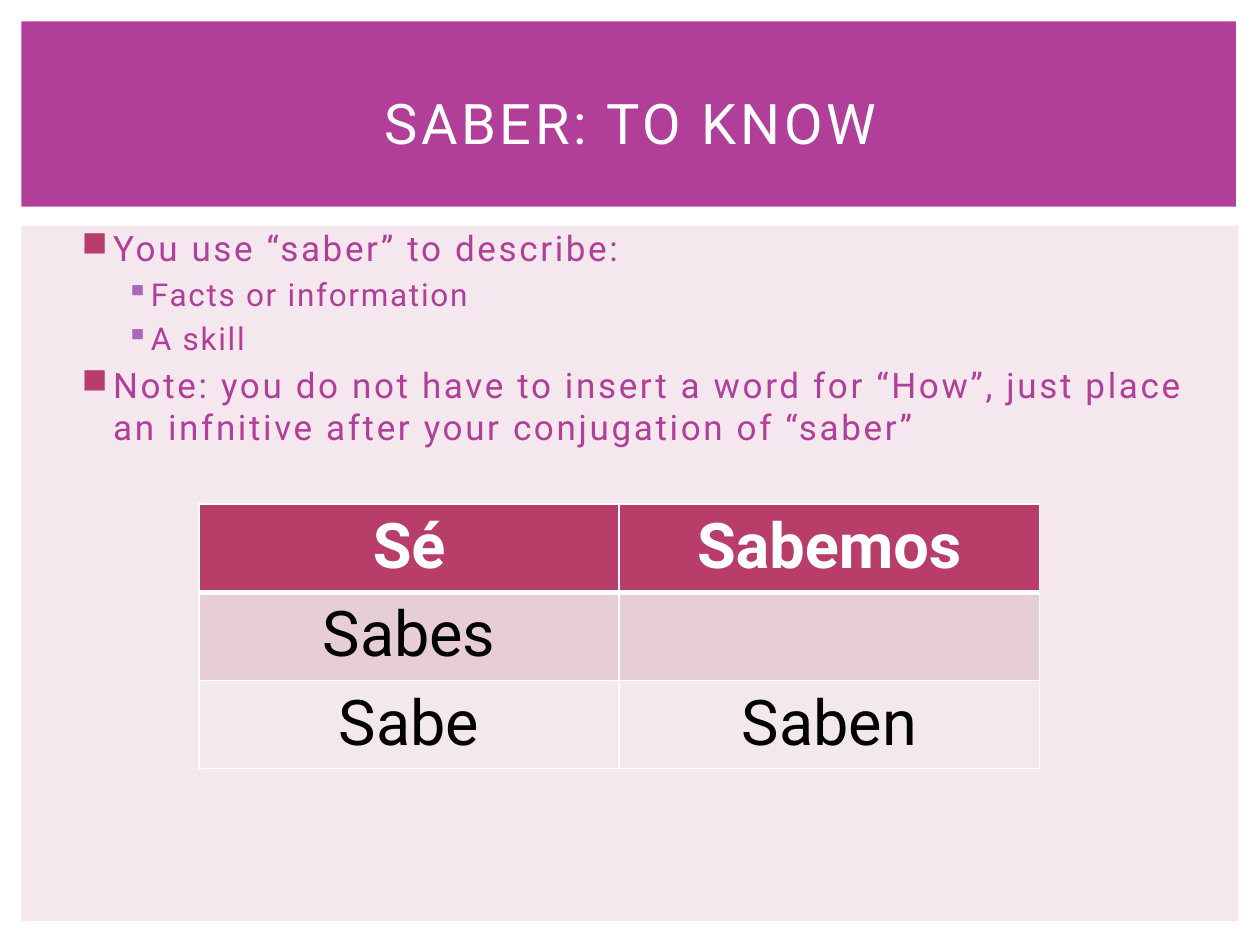
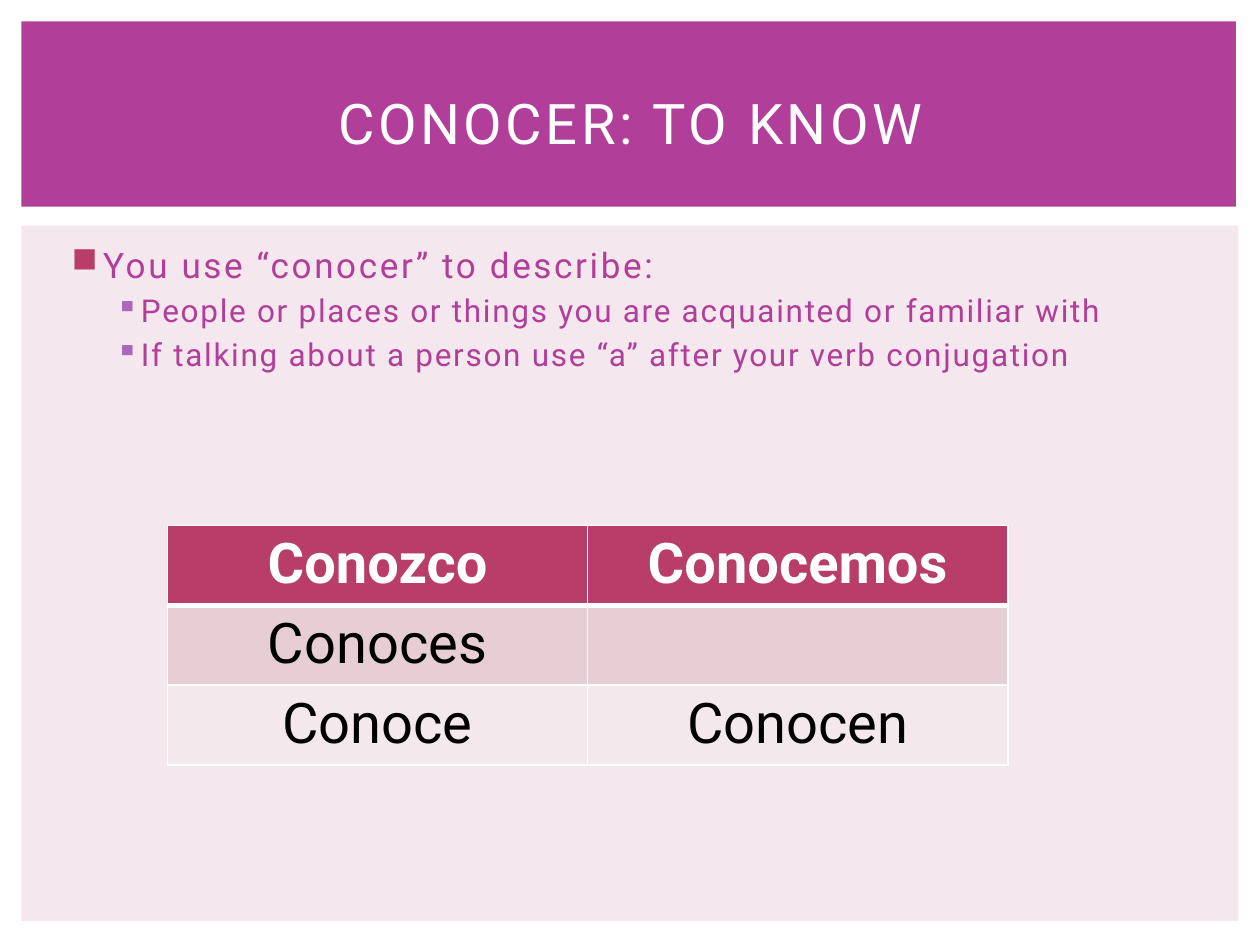
from lxml import etree
from pptx import Presentation
from pptx.dml.color import RGBColor
from pptx.enum.shapes import MSO_SHAPE
from pptx.enum.text import MSO_ANCHOR, PP_ALIGN
from pptx.oxml.ns import qn
from pptx.util import Inches, Pt

FONT = "Roboto"
COLORS = {
    "white": "FFFFFF",
    "black": "000000",
    "panel": "F4E7ED",
    "band": "B13F9A",
    "header": "B83D68",
    "sub_bullet": "AC66BB",
    "row_dark": "E6CED4",
    "row_light": "F3E8EB",
}
BULLETS = [
    {"size": 20, "spacing": 150, "char": "■", "color": "header", "left": 0.3, "hang": 0.25},
    {"size": 18, "spacing": 100, "char": "▪", "color": "sub_bullet", "left": 0.6, "hang": 0.2},
]
ROW_FILLS = ["header", "row_dark", "row_light"]

SLIDES = [
    {
        "title": "SABER: TO KNOW",
        "body_at": (0.5, 1.75, 9, 2.08),
        "body": [
            (0, "You use “saber” to describe:"),
            (1, "Facts or information"),
            (1, "A skill"),
            (0, "Note: you do not have to insert a word for “How”, just place an "
                "infnitive after your conjugation of “saber”"),
        ],
        "table_at": (1.58, 4),
        "row_height": 0.69,
        "verb_size": 36,
        "verbs": [("Sé", "Sabemos"), ("Sabes", ""), ("Sabe", "Saben")],
    },
    {
        "title": "CONOCER: TO KNOW",
        "body_at": (0.42, 1.88, 9.19, 4.82),
        "body": [
            (0, "You use “conocer” to describe:"),
            (1, "People or places or things you are acquainted or familiar with"),
            (1, "If talking about a person use “a” after your verb conjugation"),
        ],
        "table_at": (1.33, 4.17),
        "row_height": 0.62,
        "verb_size": 32,
        "verbs": [("Conozco", "Conocemos"), ("Conoces", ""), ("Conoce", "Conocen")],
    },
]


def write(p, text, size, color, spacing=0, bold=False, align=PP_ALIGN.LEFT):
    p.alignment = align
    r = p.add_run()
    r.text = text
    r.font.name = FONT
    r.font.size = Pt(size)
    r.font.bold = bold
    r.font.color.rgb = RGBColor.from_string(COLORS[color])
    if spacing:
        r._r.get_or_add_rPr().set("spc", str(spacing))


def add_border(cell, side, width):
    ln = etree.SubElement(cell._tc.get_or_add_tcPr(), qn(f"a:{side}"), w=str(Pt(width)))
    fill = etree.SubElement(ln, qn("a:solidFill"))
    etree.SubElement(fill, qn("a:srgbClr"), val=COLORS["white"])


prs = Presentation()
prs.slide_width = Inches(10)
prs.slide_height = Inches(7.5)

for content in SLIDES:
    slide = prs.slides.add_slide(prs.slide_layouts[6])

    for color, at in [("panel", (0.17, 1.79, 9.66, 5.52)), ("band", (0.17, 0.17, 9.64, 1.47))]:
        sp = slide.shapes.add_shape(MSO_SHAPE.RECTANGLE, *map(Inches, at))
        sp.shadow.inherit = False
        sp.fill.solid()
        sp.fill.fore_color.rgb = RGBColor.from_string(COLORS[color])
        sp.line.fill.background()

    tf = slide.shapes.add_textbox(*map(Inches, content["body_at"])).text_frame
    tf.word_wrap = True
    for i, (level, text) in enumerate(content["body"]):
        style = BULLETS[level]
        p = tf.add_paragraph() if i else tf.paragraphs[0]
        p.level = level
        p.space_before = Pt(style["size"] * 0.2)
        write(p, text, style["size"], "band", spacing=style["spacing"])
        pPr = p._p.get_or_add_pPr()
        pPr.set("marL", str(Inches(style["left"])))
        pPr.set("indent", str(-Inches(style["hang"])))
        bullet_color = etree.SubElement(pPr, qn("a:buClr"))
        etree.SubElement(bullet_color, qn("a:srgbClr"), val=COLORS[style["color"]])
        etree.SubElement(pPr, qn("a:buChar"), char=style["char"])

    tf = slide.shapes.add_textbox(*map(Inches, (0.42, 0.39, 9.17, 1.15))).text_frame
    tf.word_wrap = True
    tf.vertical_anchor = MSO_ANCHOR.MIDDLE
    write(tf.paragraphs[0], content["title"], 32, "white", spacing=200, align=PP_ALIGN.CENTER)

    left, top = content["table_at"]
    height = content["row_height"]
    table = slide.shapes.add_table(
        3, 2, Inches(left), Inches(top), Inches(6.67), Inches(3 * height)
    ).table
    for row, verbs, fill in zip(table.rows, content["verbs"], ROW_FILLS):
        row.height = Inches(height)
        header = fill == "header"
        for cell, verb in zip(row.cells, verbs):
            for side in ("lnL", "lnR", "lnT", "lnB"):
                thick = (header and side == "lnB") or (fill == "row_dark" and side == "lnT")
                add_border(cell, side, 3 if thick else 1)
            cell.fill.solid()
            cell.fill.fore_color.rgb = RGBColor.from_string(COLORS[fill])
            if verb:
                write(cell.text_frame.paragraphs[0], verb, content["verb_size"],
                      "white" if header else "black", bold=header, align=PP_ALIGN.CENTER)

prs.save("out.pptx")
